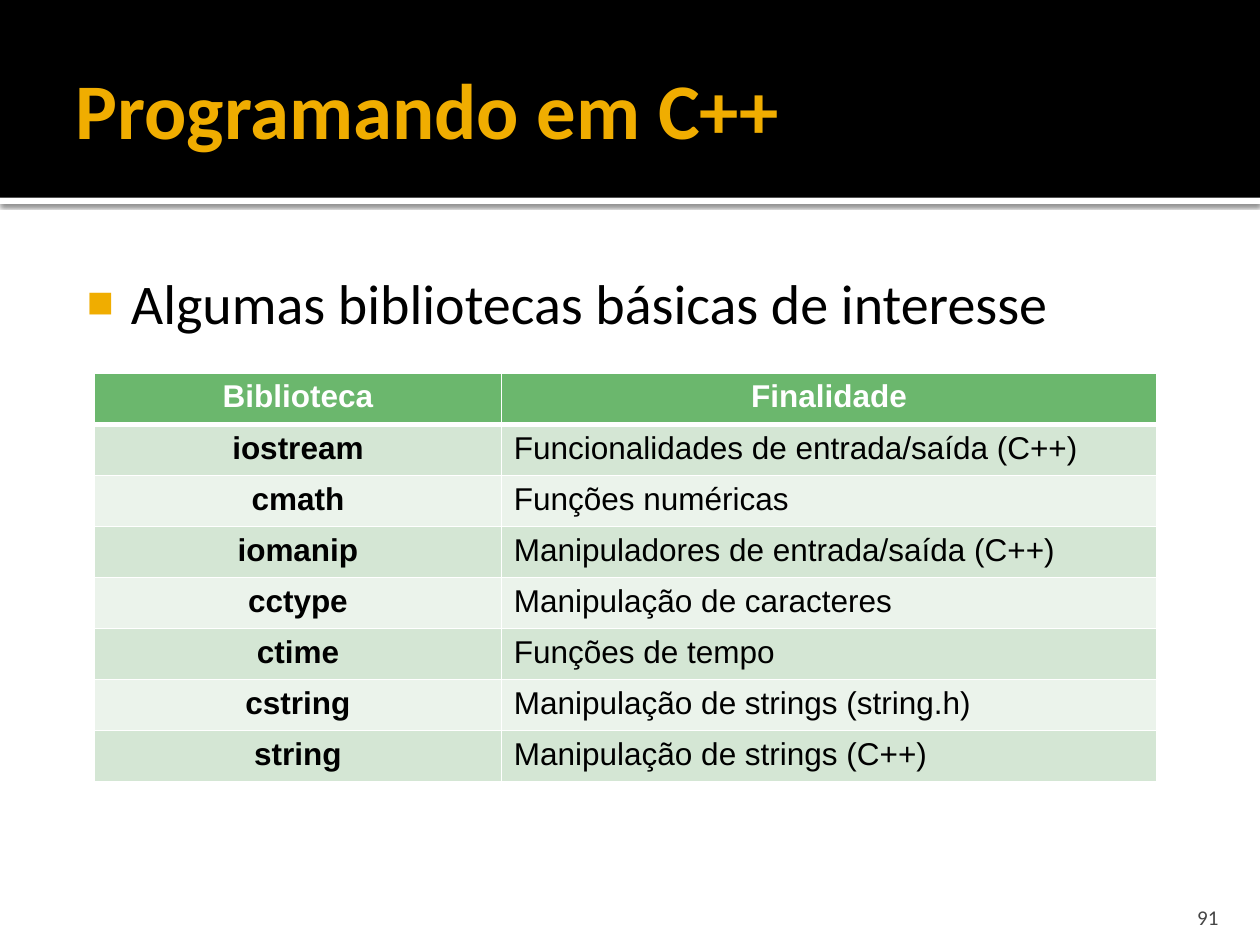
import dataclasses

import lxml.etree
import pptx
import pptx.dml.color
import pptx.enum.shapes
import pptx.enum.text
import pptx.oxml.ns
import pptx.util

Pt = pptx.util.Pt
Align = pptx.enum.text.PP_ALIGN
Anchor = pptx.enum.text.MSO_ANCHOR


@dataclasses.dataclass(frozen=True)
class Theme:
    """Colours, fonts and type sizes of the slide."""
    black: str = "000000"
    white: str = "FFFFFF"
    accent: str = "F0AD00"
    grey: str = "454545"
    header: str = "6BB76D"
    stripes: tuple = ("D4E6D4", "EBF3EB")
    text_font: str = "Calibri"
    table_font: str = "Arial"
    title_size: int = 45
    body_size: int = 32
    table_size: int = 18
    number_size: int = 12


THEME = Theme()

LIBRARIES = [
    ("Biblioteca", "Finalidade"),
    ("iostream", "Funcionalidades de entrada/saída (C++)"),
    ("cmath", "Funções numéricas"),
    ("iomanip", "Manipuladores de entrada/saída (C++)"),
    ("cctype", "Manipulação de caracteres"),
    ("ctime", "Funções de tempo"),
    ("cstring", "Manipulação de strings (string.h)"),
    ("string", "Manipulação de strings (C++)"),
]


def rgb(colour):
    """Turn a hex string into a colour."""
    return pptx.dml.color.RGBColor.from_string(colour)


def add_element(parent, tag, **attributes):
    """Append a DrawingML element and return it."""
    return lxml.etree.SubElement(parent, pptx.oxml.ns.qn(f"a:{tag}"), attributes)


def add_colour(parent, colour):
    """Append an RGB colour element and return it."""
    return add_element(parent, "srgbClr", val=colour)


def format_paragraph(paragraph, font_name, size, colour, bold=False, align=Align.LEFT):
    """Format a paragraph and all its runs."""
    paragraph.alignment = align
    for run in paragraph.runs:
        run.font.name = font_name
        run.font.size = Pt(size)
        run.font.bold = bold
        run.font.color.rgb = rgb(colour)


def place(shape, box):
    """Move a shape to a box given in points."""
    shape.left, shape.top, shape.width, shape.height = map(Pt, box)


def set_frame(shape, text, anchor, insets):
    """Write text into a shape and return its first paragraph."""
    frame = shape.text_frame
    frame.text = text
    frame.word_wrap = True
    frame.auto_size = pptx.enum.text.MSO_AUTO_SIZE.NONE
    frame.vertical_anchor = anchor
    (frame.margin_left, frame.margin_top,
     frame.margin_right, frame.margin_bottom) = map(Pt, insets)
    return frame.paragraphs[0]


def add_band(slide, box, colour, position):
    """Add a plain band behind the placeholders."""
    band = slide.shapes.add_shape(
        pptx.enum.shapes.MSO_SHAPE.RECTANGLE, *map(Pt, box))
    band.shadow.inherit = False
    band.fill.solid()
    band.fill.fore_color.rgb = rgb(colour)
    band.line.fill.background()
    band.element.getparent().insert(position, band.element)
    return band


def add_header(slide, box):
    """Add the black header with its shadowed white edge."""
    left, top, width, height = box
    edge = add_band(slide, (left, top + height, width, 3.6), THEME.white, 2)
    effects = edge.element.spPr.find(pptx.oxml.ns.qn("a:effectLst"))
    shadow = add_element(effects, "outerShdw", blurRad=str(Pt(2.5)),
                         dist=str(Pt(0.8)), dir="5400000", rotWithShape="0")
    add_element(add_colour(shadow, THEME.black), "alpha", val="60000")
    add_band(slide, box, THEME.black, 3)


def fill_title(slide, box, text):
    """Place and format the title."""
    title = slide.shapes.title
    place(title, box)
    paragraph = set_frame(title, text, Anchor.MIDDLE, (7.2, 3.6, 3.6, 3.6))
    format_paragraph(paragraph, THEME.text_font, THEME.title_size, THEME.accent, bold=True)


def fill_body(slide, box, text):
    """Place the body and format its bullet."""
    body = slide.placeholders[1]
    place(body, box)
    paragraph = set_frame(body, text, Anchor.TOP, (4.32, 13.5, 7.2, 3.6))
    paragraph.space_before = Pt(0)
    properties = paragraph._p.get_or_add_pPr()
    properties.set("marL", str(Pt(34.5)))
    properties.set("indent", str(Pt(-25.2)))
    add_colour(add_element(properties, "buClr"), THEME.accent)
    add_element(properties, "buSzPct", val="80000")
    add_element(properties, "buFont", typeface=THEME.table_font)
    add_element(properties, "buChar", char="■")
    format_paragraph(paragraph, THEME.text_font, THEME.body_size, THEME.black)


def set_borders(cell, top, bottom):
    """Draw white borders around a cell."""
    properties = cell._tc.get_or_add_tcPr()
    for side, width in (("L", 1), ("R", 1), ("T", top), ("B", bottom)):
        line = add_element(properties, f"ln{side}", w=str(Pt(width)))
        add_colour(add_element(line, "solidFill"), THEME.white)


def add_library_table(slide, box, column_widths, rows):
    """Add the striped table of libraries."""
    table = slide.shapes.add_table(len(rows), len(column_widths), *map(Pt, box)).table
    for column, width in zip(table.columns, column_widths):
        column.width = Pt(width)
    for row_index, row in enumerate(rows):
        is_header = row_index == 0
        fill = THEME.header if is_header else THEME.stripes[(row_index - 1) % 2]
        for column_index, text in enumerate(row):
            cell = table.cell(row_index, column_index)
            emphasised = is_header or column_index == 0
            set_borders(cell, 3 if row_index == 1 else 1, 3 if is_header else 1)
            cell.fill.solid()
            cell.fill.fore_color.rgb = rgb(fill)
            cell.text_frame.text = text
            format_paragraph(
                cell.text_frame.paragraphs[0], THEME.table_font, THEME.table_size,
                THEME.white if is_header else THEME.black, bold=emphasised,
                align=Align.CENTER if emphasised else Align.LEFT)


def add_slide_number(slide, box, number):
    """Add the slide number."""
    shape = slide.shapes.add_textbox(*map(Pt, box))
    paragraph = set_frame(shape, number, Anchor.BOTTOM, (7.2, 3.6, 7.2, 0))
    format_paragraph(paragraph, THEME.text_font, THEME.number_size, THEME.grey,
                     align=Align.RIGHT)


def main():
    """Build and save the slide."""
    presentation = pptx.Presentation()
    presentation.slide_width, presentation.slide_height = Pt(720), Pt(540)
    slide = presentation.slides.add_slide(presentation.slide_layouts[1])
    add_header(slide, (0, 0, 720, 113))
    fill_title(slide, (36, 12.24, 621.5, 98.6), "Programando em C++")
    fill_body(slide, (36, 139.7, 648, 364.3), "Algumas bibliotecas básicas de interesse")
    add_slide_number(slide, (645.8, 509.8, 57.6, 21.6), "91")
    add_library_table(slide, (54, 213.2, 607, 233.6), (232.5, 374.5), LIBRARIES)
    presentation.save("out.pptx")


if __name__ == "__main__":
    main()
